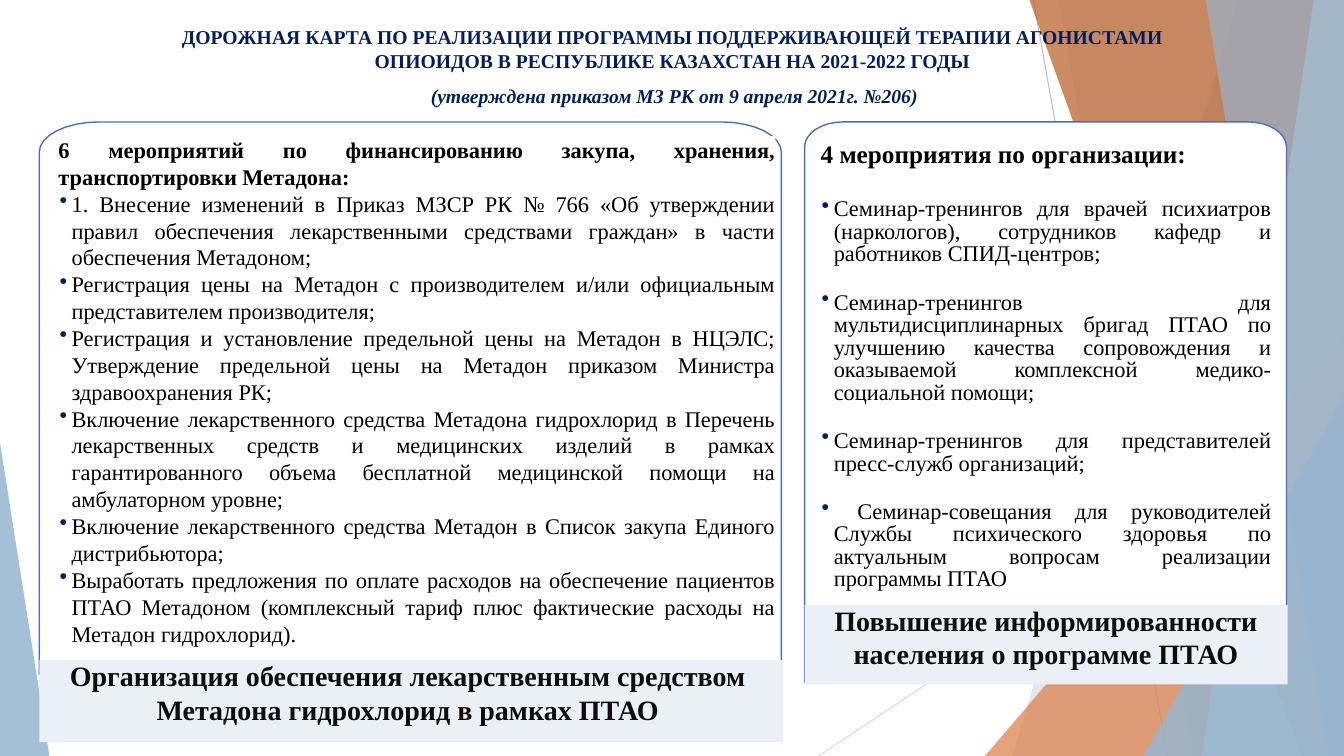
from dataclasses import dataclass
from math import cos, pi, sin

from lxml import etree
from pptx import Presentation
from pptx.dml.color import RGBColor
from pptx.enum.shapes import MSO_CONNECTOR, MSO_SHAPE
from pptx.enum.text import MSO_ANCHOR, PP_ALIGN
from pptx.oxml.ns import qn
from pptx.util import Inches, Pt

LINE = MSO_CONNECTOR.STRAIGHT
RECT, TRI = MSO_SHAPE.RECTANGLE, MSO_SHAPE.ISOSCELES_TRIANGLE
TOP = MSO_ANCHOR.TOP
CENTER, JUSTIFY = PP_ALIGN.CENTER, PP_ALIGN.JUSTIFY
WIDE, HIGH = 13.33, 7.5


@dataclass(frozen=True)
class Theme:
    font: str = "Times New Roman"
    navy: str = "001F5F"
    black: str = "000000"
    ink: str = "0D0D0D"
    white: str = "FFFFFF"
    edge: str = "4471C4"
    band: str = "EAF0F6"
    sky: str = "94B6D2"
    pale: str = "BFD3E4"
    orange: str = "DD8047"
    rust: str = "B95B22"
    title: int = 14
    body: int = 16
    head: int = 18
    foot: int = 20


T = Theme()

HEAD = [
    ("ДОРОЖНАЯ КАРТА ПО РЕАЛИЗАЦИИ ПРОГРАММЫ ПОДДЕРЖИВАЮЩЕЙ ТЕРАПИИ АГОНИСТАМИ "
     "ОПИОИДОВ В РЕСПУБЛИКЕ КАЗАХСТАН НА 2021-2022 ГОДЫ", {}),
    ("(утверждена приказом МЗ РК от 9 апреля 2021г. №206)",
     dict(italic=True, before=8.3, left=0.04)),
]
SUPPLY = "6 мероприятий по финансированию закупа, хранения, транспортировки Метадона:"
STEPS = [
    "1. Внесение изменений в Приказ МЗСР РК № 766 «Об утверждении правил обеспечения "
    "лекарственными средствами граждан» в части обеспечения Метадоном;",
    "Регистрация цены на Метадон с производителем и/или официальным представителем "
    "производителя;",
    "Регистрация и установление предельной цены на Метадон в НЦЭЛС; Утверждение "
    "предельной цены на Метадон приказом Министра здравоохранения РК;",
    "Включение лекарственного средства Метадона гидрохлорид в Перечень лекарственных "
    "средств и медицинских изделий в рамках гарантированного объема бесплатной "
    "медицинской помощи на амбулаторном уровне;",
    "Включение лекарственного средства Метадон в Список закупа Единого дистрибьютора;",
    "Выработать предложения по оплате расходов на обеспечение пациентов ПТАО Метадоном "
    "(комплексный тариф плюс фактические расходы на Метадон гидрохлорид).",
]
EVENTS = "4 мероприятия по организации:"
TALKS = [
    "Семинар-тренингов для врачей психиатров (наркологов), сотрудников кафедр и "
    "работников СПИД-центров;",
    "Семинар-тренингов для мультидисциплинарных бригад ПТАО по улучшению качества "
    "сопровождения и оказываемой комплексной медико-социальной помощи;",
    "Семинар-тренингов для представителей пресс-служб организаций;",
    " Семинар-совещания для руководителей Службы психического здоровья по актуальным "
    "вопросам реализации программы ПТАО",
]


def paint(shape, fill=None, line=None, alpha=None):
    shape.shadow.inherit = False
    if fill:
        shape.fill.solid()
        shape.fill.fore_color.rgb = RGBColor.from_string(fill)
        if alpha:
            tint = shape._element.spPr.find(qn("a:solidFill"))[0]
            etree.SubElement(tint, qn("a:alpha")).set("val", str(alpha * 1000))
    else:
        shape.fill.background()
    if line:
        shape.line.color.rgb = RGBColor.from_string(line)
        shape.line.width = Pt(1)
    else:
        shape.line.fill.background()


def block(slide, kind, box, adj=None, **look):
    shape = slide.shapes.add_shape(kind, *map(Inches, box))
    if adj is not None:
        shape.adjustments[0] = adj
    paint(shape, **look)


def outline(slide, points, **look):
    first, *rest = [(Inches(x), Inches(y)) for x, y in points]
    build = slide.shapes.build_freeform(*first, scale=1)
    build.add_line_segments(rest, close=True)
    paint(build.convert_to_shape(), **look)


def bullet(para):
    props = para._p.get_or_add_pPr()
    tint = etree.SubElement(etree.SubElement(props, qn("a:buClr")), qn("a:srgbClr"))
    tint.set("val", T.navy)
    etree.SubElement(props, qn("a:buChar")).set("char", "•")


def write(para, words, size=T.body, color=T.black, bold=False, italic=False,
          align=JUSTIFY, before=0, pitch=None, left=0.01, dot=False):
    para.alignment = align
    para.space_before = Pt(before)
    if pitch:
        para.line_spacing = Pt(pitch)
    props = para._p.get_or_add_pPr()
    props.set("marL", str(Inches(0.14 if dot else left)))
    props.set("indent", str(Inches(-0.12 if dot else 0)))
    if dot:
        bullet(para)
    run = para.add_run()
    run.text = words
    font = run.font
    font.name, font.size, font.bold, font.italic = T.font, Pt(size), bold, italic
    font.color.rgb = RGBColor.from_string(color)


def text(slide, box, paras, **base):
    """Adds a text box; each paragraph is (words, its own format)."""
    frame = slide.shapes.add_textbox(*map(Inches, box)).text_frame
    frame.word_wrap = True
    frame.vertical_anchor = TOP
    frame.margin_left = frame.margin_right = frame.margin_top = frame.margin_bottom = 0
    for i, (words, own) in enumerate(paras):
        para = frame.add_paragraph() if i else frame.paragraphs[0]
        write(para, words, **{**base, **own})


def ray(slide, start, end, color):
    line = slide.shapes.add_connector(LINE, *map(Inches, start + end))
    line.line.color.rgb = RGBColor.from_string(color)
    line.line.width = Pt(0.75)
    etree.SubElement(line._element.spPr, qn("a:effectLst"))


def facet(slide, top, foot, color, alpha):
    """Fills from a slanted edge to the right side of the slide."""
    outline(slide, [(top, 0), (WIDE, 0), (WIDE, HIGH), (foot, HIGH)],
            fill=color, alpha=alpha)


def corner(slide, left, top, apex, color, alpha, width):
    block(slide, TRI, (left, top, width, HIGH - top), apex, fill=color, alpha=alpha)


def backdrop(slide):
    ray(slide, (10.25, 0), (11.58, HIGH), "BFBFBF")
    ray(slide, (WIDE, 4.03), (8.12, HIGH), "D9D9D9")
    facet(slide, 12.28, 10.04, T.sky, 30)
    facet(slide, 10.5, 11.83, T.sky, 20)
    corner(slide, 9.77, 3.33, 1, T.orange, 72, 3.56)
    facet(slide, 10.21, 12.91, T.rust, 70)
    facet(slide, 13.03, 11.92, T.pale, 70)
    facet(slide, 11.96, 13.18, T.sky, 65)
    corner(slide, 11.34, 3.93, 1, T.sky, 80, 1.99)
    corner(slide, 0, 4.39, 0, T.sky, 85, 0.49)


def panel(slide, box, rx, ry, fill=None):
    """Draws a frame whose two top corners are quarter ellipses."""
    x, y, w, h = box
    turns = [i * pi / 16 for i in range(9)]
    arc = [(x + rx - rx * cos(a), y + ry - ry * sin(a)) for a in turns]
    arc += [(x + w - rx + rx * sin(a), y + ry - ry * cos(a)) for a in turns]
    outline(slide, arc + [(x + w, y + h), (x, y + h)], fill=fill, line=T.edge)


def footer(slide, box, lines, width):
    x, y, w, h = box
    block(slide, RECT, box, fill=T.band)
    text(slide, (x, y - 0.02, width, 0.7), [(line, {}) for line in lines],
         size=T.foot, color=T.ink, bold=True, align=CENTER, pitch=24.2)


def supply(slide, box):
    x, y, w, h = box
    panel(slide, (x, y, w, 5.48), 0.59, 0.3)
    body = (x + 0.18, y + 0.14, w - 0.24, 5.35)
    block(slide, RECT, body, fill=T.white)
    text(slide, body, [(SUPPLY, dict(bold=True))] + [(s, dict(dot=True)) for s in STEPS])
    footer(slide, (x, y + h - 0.81, w + 0.02, 0.81),
           ["Организация обеспечения лекарственным средством",
            "Метадона гидрохлорид в рамках ПТАО"], w - 0.06)


def events(slide, box):
    x, y, w, h = box
    panel(slide, (x, y, w, h - 0.02), 0.38, 0.25, T.white)
    rows = [(EVENTS, dict(size=T.head, bold=True))]
    for i, talk in enumerate(TALKS):
        rows.append((talk, dict(dot=True, pitch=16.1, before=18.3 if i else 21.8)))
    text(slide, (x + 0.15, y + 0.16, w - 0.3, 4.6), rows)
    footer(slide, (x, y + h - 0.79, w + 0.01, 0.79),
           ["Повышение информированности", "населения о программе ПТАО"], w)


def main():
    deck = Presentation()
    deck.slide_width, deck.slide_height = Inches(WIDE), Inches(HIGH)
    slide = deck.slides.add_slide(deck.slide_layouts[6])
    backdrop(slide)
    supply(slide, (0.39, 1.21, 7.36, 6.15))
    events(slide, (7.98, 1.21, 4.78, 5.58))
    text(slide, (1.49, 0.25, 10.36, 0.82), HEAD,
         size=T.title, color=T.navy, bold=True, align=CENTER, left=0)
    deck.save("out.pptx")


if __name__ == "__main__":
    main()
